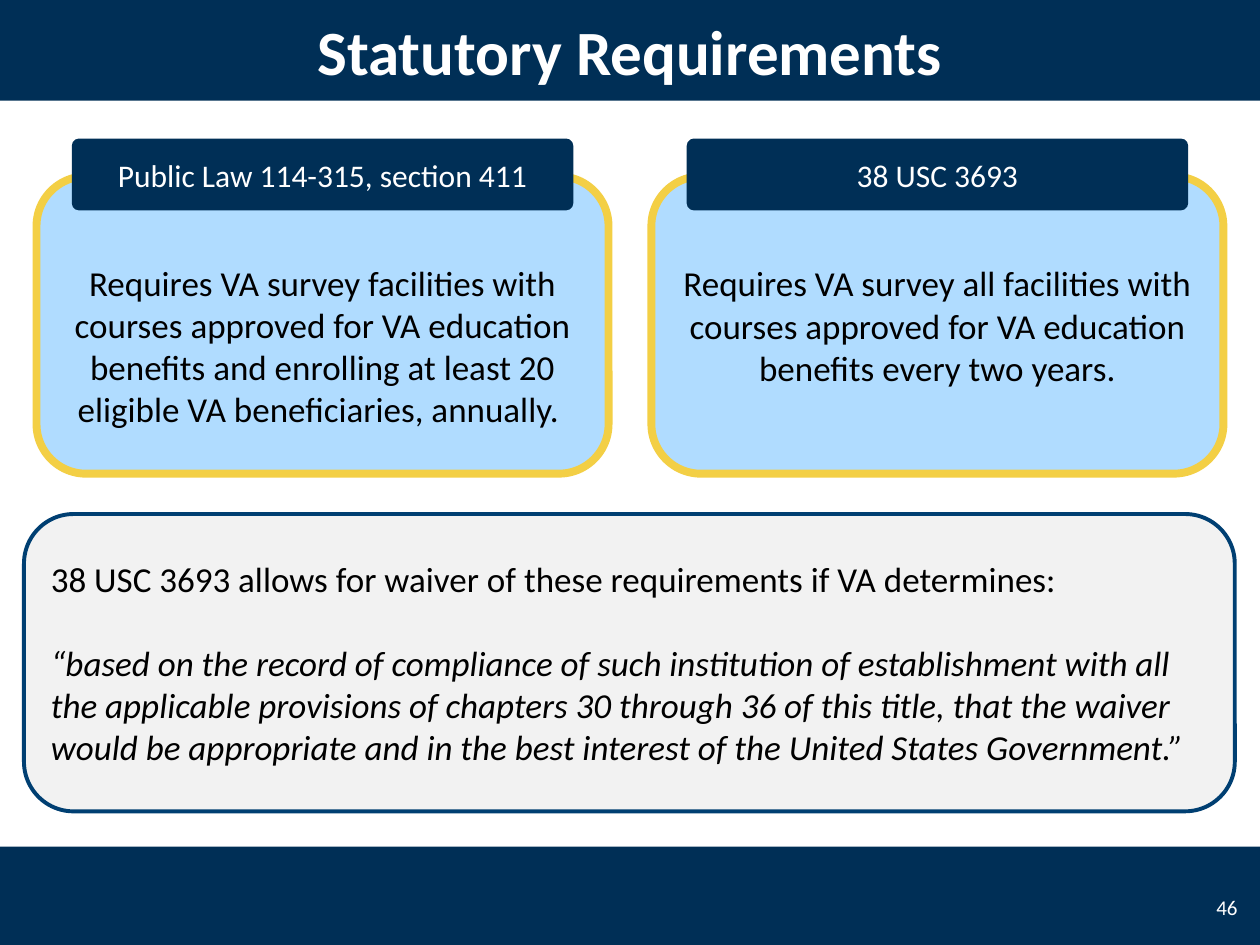
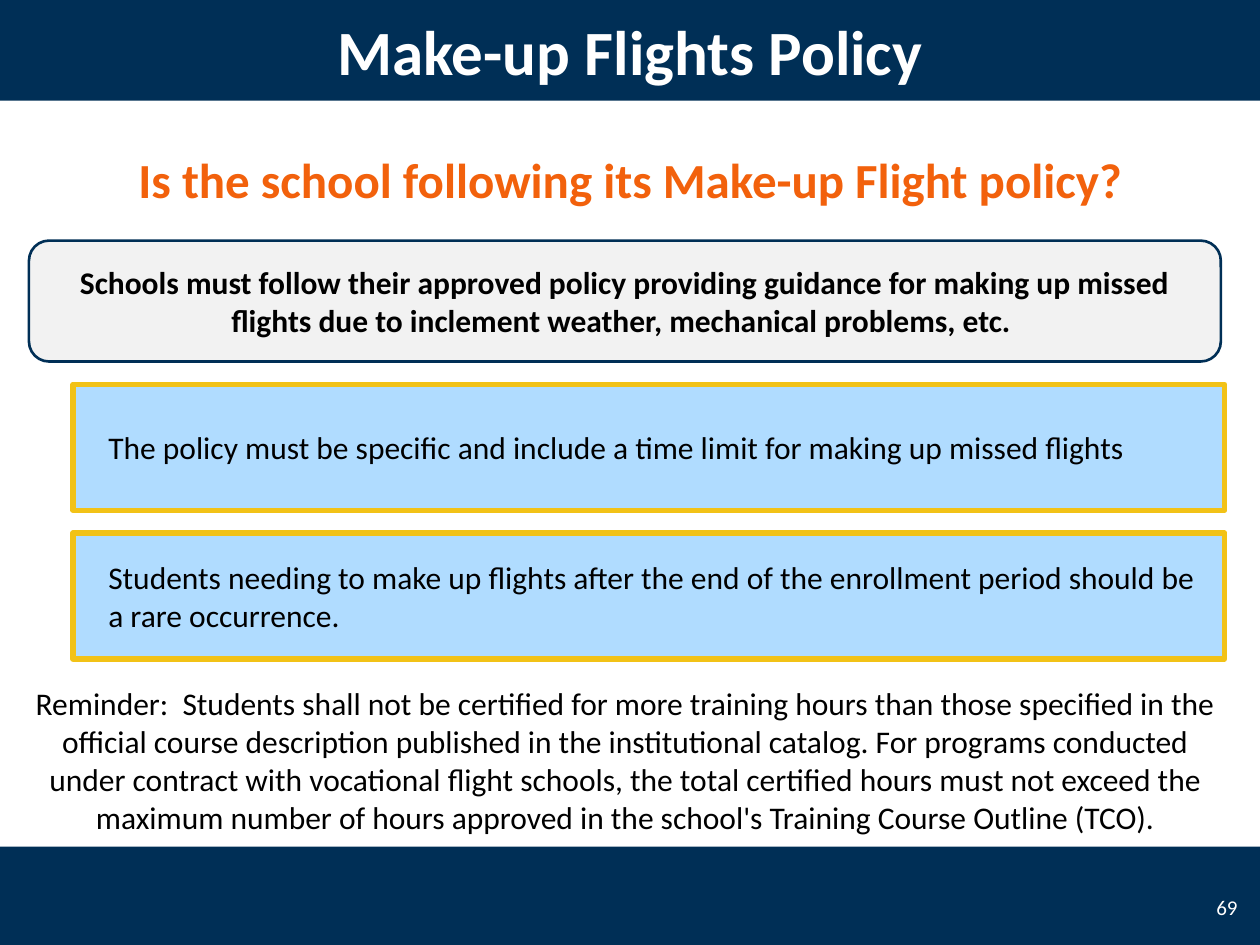
"""Build two slides on survey requirements and the make-up flights policy."""
from pptx import Presentation
from pptx.dml.color import RGBColor
from pptx.enum.shapes import MSO_SHAPE
from pptx.enum.text import MSO_ANCHOR, PP_ALIGN
from pptx.util import Inches, Pt

RECTANGLE, ROUNDED = MSO_SHAPE.RECTANGLE, MSO_SHAPE.ROUNDED_RECTANGLE
LEFT, CENTER, RIGHT = PP_ALIGN.LEFT, PP_ALIGN.CENTER, PP_ALIGN.RIGHT
MIDDLE = MSO_ANCHOR.MIDDLE

FONT = "Calibri"
COLORS = {
    "navy": "002F56", "outline": "003F72", "sky": "B0DCFF", "gold": "F3CF45",
    "amber": "F2C217", "gray": "F2F2F2", "orange": "F2610C",
    "white": "FFFFFF", "black": "000000",
}

STATUTES = {
    "title": "Statutory Requirements",
    "number": 46,
    "cards": [
        {"header": "Public Law 114-315, section 411", "text_drop": 0.33,
         "body": "Requires VA survey facilities with courses approved for VA education "
                 "benefits and enrolling at least 20 eligible VA beneficiaries, annually. "},
        {"header": "38 USC 3693", "text_drop": 0,
         "body": "Requires VA survey all facilities with courses approved for VA "
                 "education benefits every two years."},
    ],
    "waiver": [
        "38 USC 3693 allows for waiver of these requirements if VA determines:",
        "“based on the record of compliance of such institution of establishment with "
        "all the applicable provisions of chapters 30 through 36 of this title, that the "
        "waiver would be appropriate and in the best interest of the United States "
        "Government.”",
    ],
}

FLIGHTS = {
    "title": "Make-up Flights Policy",
    "number": 69,
    "question": "Is the school following its Make-up Flight policy?",
    "rule": "Schools must follow their approved policy providing guidance for making up "
            "missed flights due to inclement weather, mechanical problems, etc. ",
    "statements": [
        "The policy must be specific and include a time limit for making up missed flights",
        "Students needing to make up flights after the end of the enrollment period "
        "should be a rare occurrence.",
    ],
    "reminder": "Reminder:  Students shall not be certified for more training hours than "
                "those specified in the official course description published in the "
                "institutional catalog. For programs conducted under contract with "
                "vocational flight schools, the total certified hours must not exceed the "
                "maximum number of hours approved in the school's Training Course Outline "
                "(TCO).",
}

WIDTH, HEIGHT = 10, 7.5
BAND_HEIGHT, FOOTER_TOP = 0.8, 6.72
CARD_LEFT, CARD_TOP, CARD_WIDTH, CARD_HEIGHT, CARD_PITCH = 0.29, 1.4, 4.54, 2.36, 4.88
HEADER_INDENT, HEADER_TOP, HEADER_HEIGHT = 0.28, 1.1, 0.57
STATEMENT_TOP, STATEMENT_HEIGHT, STATEMENT_PITCH = 3.05, 1, 1.18


def color(name):
    return RGBColor.from_string(COLORS[name])


def write(shape, paragraphs, size, ink="black", bold=False, align=CENTER):
    """Fill a shape with evenly styled, vertically centred paragraphs."""
    frame = shape.text_frame
    frame.word_wrap = True
    frame.vertical_anchor = MIDDLE
    frame.text = "\n".join(paragraphs)
    for paragraph in frame.paragraphs:
        paragraph.alignment = align
        for run in paragraph.runs:
            run.font.name, run.font.size, run.font.bold = FONT, Pt(size), bold
            run.font.color.rgb = color(ink)
    return frame


def add_panel(slide, kind, box, fill, line=None, line_width=0):
    shape = slide.shapes.add_shape(kind, *map(Inches, box))
    shape.shadow.inherit = False
    shape.fill.solid()
    shape.fill.fore_color.rgb = color(fill)
    if line:
        shape.line.color.rgb = color(line)
        shape.line.width = Pt(line_width)
    else:
        shape.line.fill.background()
    return shape


def add_text(slide, box, text, size, **style):
    return write(slide.shapes.add_textbox(*map(Inches, box)), [text], size, **style)


def add_base_slide(presentation, content):
    slide = presentation.slides.add_slide(presentation.slide_layouts[6])
    for top, height in ((FOOTER_TOP, HEIGHT - FOOTER_TOP), (0, BAND_HEIGHT)):
        add_panel(slide, RECTANGLE, (0, top, WIDTH, height), "navy")
    add_text(slide, (9.5, 7, 0.42, 0.4), str(content["number"]), 12, ink="white", align=RIGHT)
    add_text(slide, (0.5, 0, WIDTH - 1, BAND_HEIGHT), content["title"], 36,
             ink="white", bold=True)
    return slide


def add_statutes_slide(presentation):
    slide = add_base_slide(presentation, STATUTES)
    for column, card in enumerate(STATUTES["cards"]):
        left = CARD_LEFT + column * CARD_PITCH
        body = add_panel(slide, ROUNDED, (left, CARD_TOP, CARD_WIDTH, CARD_HEIGHT),
                         "sky", "gold", 4.5)
        frame = write(body, [card["body"]], 20)
        frame.margin_top = Inches(0.05 + card["text_drop"])
        header = add_panel(slide, ROUNDED,
                           (left + HEADER_INDENT, HEADER_TOP,
                            CARD_WIDTH - 2 * HEADER_INDENT, HEADER_HEIGHT), "navy")
        header.adjustments[0] = 0.1
        write(header, [card["header"]], 18, ink="white")

    waiver = add_panel(slide, ROUNDED, (0.19, 4.08, 9.61, CARD_HEIGHT), "gray", "outline", 2.25)
    quote = write(waiver, STATUTES["waiver"], 20, align=LEFT).paragraphs[1]
    quote.space_before = Pt(24)
    quote.runs[0].font.italic = True


def add_flights_slide(presentation):
    slide = add_base_slide(presentation, FLIGHTS)
    add_text(slide, (0, 1.03, WIDTH, 0.78), FLIGHTS["question"], 28, ink="orange", bold=True)
    rule = add_panel(slide, ROUNDED, (0.23, 1.91, 9.46, 0.96), "gray", "navy", 1.5)
    write(rule, [FLIGHTS["rule"]], 18, bold=True)
    for row, statement in enumerate(FLIGHTS["statements"]):
        top = STATEMENT_TOP + row * STATEMENT_PITCH
        panel = add_panel(slide, RECTANGLE, (0.58, top, 9.14, STATEMENT_HEIGHT),
                          "sky", "amber", 3)
        write(panel, [statement], 18, align=LEFT).margin_left = Inches(0.28)
    add_text(slide, (0.08, 5.38, 9.77, 1.3), FLIGHTS["reminder"], 18)


def main():
    presentation = Presentation()
    presentation.slide_width, presentation.slide_height = Inches(WIDTH), Inches(HEIGHT)
    add_statutes_slide(presentation)
    add_flights_slide(presentation)
    presentation.save("out.pptx")


if __name__ == "__main__":
    main()
